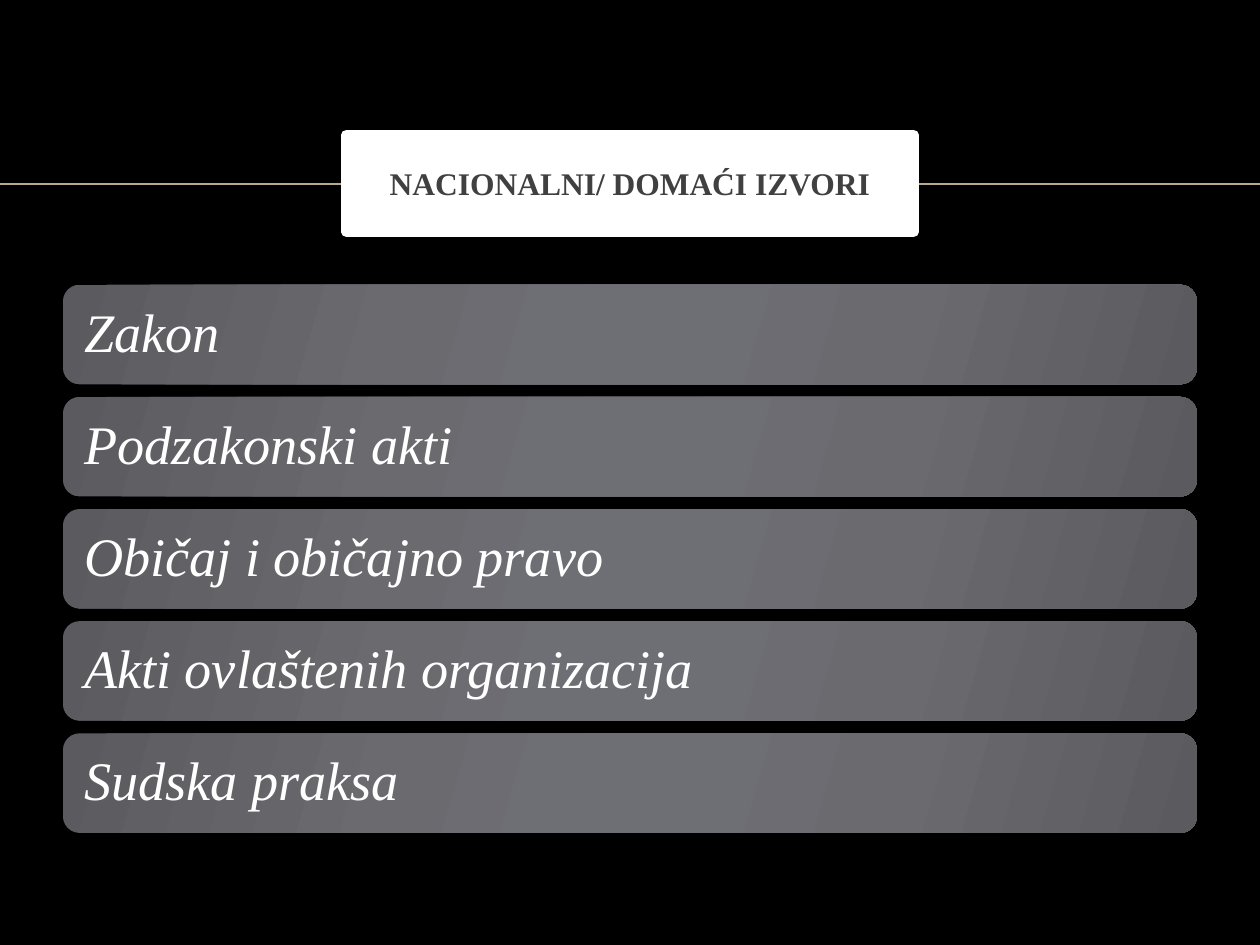
import copy

import pptx
import pptx.dml.color
import pptx.enum.shapes
import pptx.enum.text
import pptx.oxml.ns
import pptx.oxml.xmlchemy
import pptx.util

WIDTH, HEIGHT = 10, 7.5
SOURCES = [
    "Zakon",
    "Podzakonski akti",
    "Običaj i običajno pravo",
    "Akti ovlaštenih organizacija",
    "Sudska praksa",
]
BAR_GRADIENT = [
    (0, "5B5B5F"), (0.3, "6A6A6F"), (0.45, "6E6E75"),
    (0.55, "6E6E75"), (0.73, "6A6A6F"), (1, "5B5B5F"),
]
FIRST_BAR_TOP, BAR_HEIGHT, BAR_PITCH = 2.26, 0.79, 0.89


def color(hex_string):
    return pptx.dml.color.RGBColor.from_string(hex_string)


def write_text(shape, text, *, size, text_color, align, inset=0.1, bold=False,
               italic=False, line_spacing=1.0, font="Times New Roman"):
    frame = shape.text_frame
    frame.word_wrap = True
    frame.vertical_anchor = pptx.enum.text.MSO_ANCHOR.MIDDLE
    frame.margin_left = frame.margin_right = pptx.util.Inches(inset)
    frame.margin_top = frame.margin_bottom = pptx.util.Inches(inset)
    paragraph = frame.paragraphs[0]
    paragraph.alignment = align
    paragraph.line_spacing = line_spacing
    run = paragraph.add_run()
    run.text = text
    run.font.name = font
    run.font.size = pptx.util.Pt(size)
    run.font.bold = bold
    run.font.italic = italic
    run.font.color.rgb = color(text_color)


class SlideBuilder:
    """Holds the slide and its style; lengths are shares of the slide's size."""

    background = "000000"
    rule_color = "BBAA8A"
    panel_color = "FFFFFF"
    title_color = "404040"
    bar_text_color = "FFFFFF"

    def __init__(self, presentation):
        self.width = presentation.slide_width
        self.height = presentation.slide_height
        self.slide = presentation.slides.add_slide(presentation.slide_layouts[6])
        fill = self.slide.background.fill
        fill.solid()
        fill.fore_color.rgb = color(self.background)

    def place(self, left, top, width, height):
        return (round(left * self.width), round(top * self.height),
                round(width * self.width), round(height * self.height))

    def shape(self, kind, box):
        shape = self.slide.shapes.add_shape(kind, *self.place(*box))
        shape.shadow.inherit = False
        return shape

    def rule(self, top):
        """Draw a thin line across the full slide width."""
        left, y, right, _ = self.place(0, top, 1, 0)
        line = self.slide.shapes.add_connector(
            pptx.enum.shapes.MSO_CONNECTOR.STRAIGHT, left, y, right, y)
        line.line.color.rgb = color(self.rule_color)
        line.line.width = pptx.util.Pt(1)
        line._element.spPr.append(pptx.oxml.xmlchemy.OxmlElement("a:effectLst"))

    def title(self, text, box):
        panel = self.shape(pptx.enum.shapes.MSO_SHAPE.RECTANGLE, box)
        panel.fill.solid()
        panel.fill.fore_color.rgb = color(self.panel_color)
        panel.line.color.rgb = color(self.panel_color)
        panel.line.width = pptx.util.Pt(6)
        write_text(panel, text, size=18, text_color=self.title_color, bold=True,
                   align=pptx.enum.text.PP_ALIGN.CENTER)
        panel.text_frame.paragraphs[0].space_before = pptx.util.Pt(4)

    def bar(self, text, box):
        bar = self.shape(pptx.enum.shapes.MSO_SHAPE.ROUNDED_RECTANGLE, box)
        self.fill_gradient(bar, BAR_GRADIENT, clockwise_angle=16)
        bar.line.fill.background()
        write_text(bar, text, size=31, text_color=self.bar_text_color, italic=True,
                   align=pptx.enum.text.PP_ALIGN.LEFT, inset=0.13, line_spacing=0.9)

    @staticmethod
    def fill_gradient(shape, stops, clockwise_angle):
        shape.fill.gradient()
        shape.fill.gradient_angle = 360 - clockwise_angle
        stop_list = shape._element.spPr.find(".//" + pptx.oxml.ns.qn("a:gsLst"))
        while len(stop_list) < len(stops):
            stop_list.append(copy.deepcopy(stop_list[0]))
        for stop, (position, stop_color) in zip(shape.fill.gradient_stops, stops):
            stop.position = position
            stop.color.rgb = color(stop_color)


def main():
    presentation = pptx.Presentation()
    presentation.slide_width = pptx.util.Inches(WIDTH)
    presentation.slide_height = pptx.util.Inches(HEIGHT)
    builder = SlideBuilder(presentation)
    builder.rule(1.46 / HEIGHT)
    builder.title("NACIONALNI/ DOMAĆI IZVORI",
                  (0.275, 1.07 / HEIGHT, 0.45, 0.77 / HEIGHT))
    for row, source in enumerate(SOURCES):
        top = FIRST_BAR_TOP + row * BAR_PITCH
        builder.bar(source, (0.05, top / HEIGHT, 0.9, BAR_HEIGHT / HEIGHT))
    presentation.save("out.pptx")


if __name__ == "__main__":
    main()
